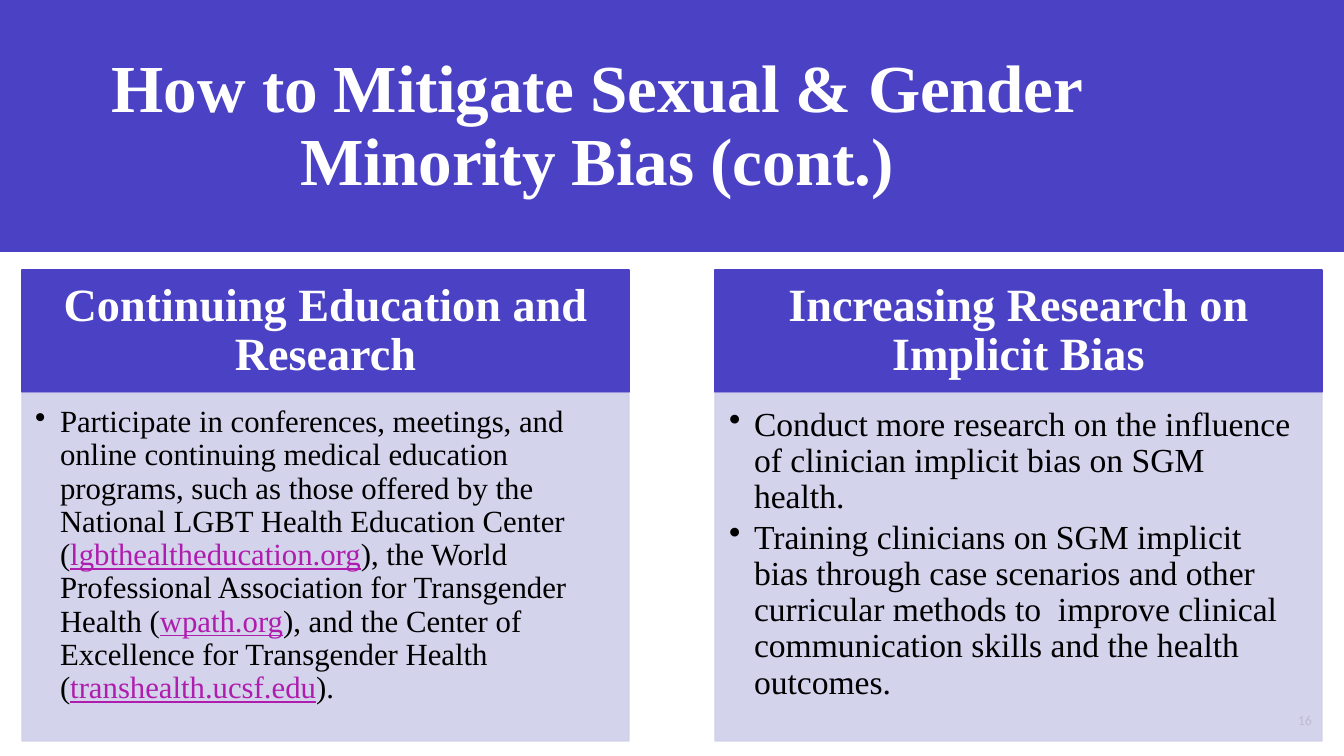
from lxml import etree
from pptx import Presentation
from pptx.dml.color import RGBColor
from pptx.enum.shapes import MSO_SHAPE
from pptx.enum.text import MSO_ANCHOR, MSO_AUTO_SIZE, PP_ALIGN
from pptx.oxml.ns import qn
from pptx.util import Emu, Pt

RECT = MSO_SHAPE.RECTANGLE
TOP, MIDDLE, BOTTOM = MSO_ANCHOR.TOP, MSO_ANCHOR.MIDDLE, MSO_ANCHOR.BOTTOM
LEFT, CENTER, RIGHT = PP_ALIGN.LEFT, PP_ALIGN.CENTER, PP_ALIGN.RIGHT
NO_FIT = MSO_AUTO_SIZE.NONE

SERIF = "Times New Roman"
INDIGO, LAVENDER, WHITE, BLACK = "4A41C5", "D0CFEA", "FFFFFF", "000000"
LINK, GREY = "AF1DAF", "BDBBD0"

CARD_W, HEAD_Y, HEAD_H, BODY_Y, BODY_H = 607, 270, 122, 393, 348

# Bullets are lists of (text, is_link) pieces
CARDS = [
    dict(x=22, heading="Continuing Education and Research", size=22,
         insets=(13, 13, 17, 19), bullets=[[
             ("Participate in conferences, meetings, and online continuing medical "
              "education programs, such as those offered by the National LGBT "
              "Health Education Center (", False),
             ("lgbthealtheducation.org", True),
             ("), the World Professional Association for Transgender Health (", False),
             ("wpath.org", True),
             ("), and the Center of Excellence for Transgender Health (", False),
             ("transhealth.ucsf.edu", True),
             (").", False)]]),
    dict(x=715, heading="Increasing Research on Implicit Bias", size=24,
         insets=(14, 14, 19, 21), bullets=[
             [("Conduct more research on the influence of clinician implicit bias "
               "on SGM health.", False)],
             [("Training clinicians on SGM implicit bias through case scenarios and "
               "other curricular methods to  improve clinical communication skills "
               "and the health outcomes.", False)]]),
]


def px(n):
    return Emu(round(n * 914400 / 100.8))


def rgb(color):
    return RGBColor.from_string(color)


def add_rect(s, x, y, w, h, color, alpha=None):
    sp = s.shapes.add_shape(RECT, px(x), px(y), px(w), px(h))
    sp.shadow.inherit = False
    sp.fill.solid()
    sp.fill.fore_color.rgb = rgb(color)
    sp.line.color.rgb = rgb(color)
    sp.line.width = Pt(1)
    if alpha:
        for clr in sp._element.spPr.iter(qn("a:srgbClr")):
            etree.SubElement(clr, qn("a:alpha")).set("val", str(alpha * 1000))
    return sp


def set_frame(sp, anchor, insets):
    tf = sp.text_frame
    tf.word_wrap = True
    tf.auto_size = NO_FIT
    tf.vertical_anchor = anchor
    tf.margin_left, tf.margin_top, tf.margin_right, tf.margin_bottom = map(px, insets)
    return tf


def set_paragraph(p, align, after=0):
    p.alignment = align
    p.line_spacing = 0.9
    p.space_before = Pt(0)
    p.space_after = Pt(after)


def add_run(p, text, size, color, font=SERIF, bold=False, underline=False):
    r = p.add_run()
    r.text = text
    r.font.name = font
    r.font.size = Pt(size)
    r.font.bold = bold
    r.font.underline = underline
    r.font.color.rgb = rgb(color)
    return r


def add_bullet(p):
    pPr = p._p.get_or_add_pPr()
    pPr.set("marL", str(px(25)))
    pPr.set("indent", str(-px(25)))
    etree.SubElement(pPr, qn("a:buChar")).set("char", "•")


def add_title(s, text):
    bar = add_rect(s, 0, 0, 1344, 252, INDIGO)
    bar.line.fill.background()
    s.shapes._spTree.insert(2, bar._element)  # behind the title
    sp = s.shapes.title
    sp.left, sp.top, sp.width, sp.height = px(72), px(40), px(1050), px(165)
    p = set_frame(sp, BOTTOM, (10, 5, 10, 5)).paragraphs[0]
    set_paragraph(p, CENTER)
    r = add_run(p, text, 48, WHITE, bold=True)
    r._r.get_or_add_rPr().set("spc", "-20")


def add_card(s, x, heading, size, insets, bullets):
    head = add_rect(s, x, HEAD_Y, CARD_W, HEAD_H, INDIGO)
    p = set_frame(head, MIDDLE, (26, 15, 26, 15)).paragraphs[0]
    set_paragraph(p, CENTER)
    add_run(p, heading, 33, WHITE, bold=True)

    body = add_rect(s, x, BODY_Y, CARD_W, BODY_H, LAVENDER, alpha=90)
    tf = set_frame(body, TOP, insets)
    for i, pieces in enumerate(bullets):
        p = tf.add_paragraph() if i else tf.paragraphs[0]
        set_paragraph(p, LEFT, after=3)
        add_bullet(p)
        for text, is_link in pieces:
            add_run(p, text, size, LINK if is_link else BLACK, underline=is_link)


def add_page_number(s, text):
    sp = s.shapes.add_textbox(px(1262), px(708), px(60), px(26))
    p = set_frame(sp, MIDDLE, (10, 5, 10, 5)).paragraphs[0]
    set_paragraph(p, RIGHT)
    add_run(p, text, 10, GREY, font="Calibri")


def main():
    prs = Presentation()
    prs.slide_width, prs.slide_height = px(1344), px(756)
    s = prs.slides.add_slide(prs.slide_layouts[5])
    add_title(s, "How to Mitigate Sexual & Gender Minority Bias (cont.)")
    for card in CARDS:
        add_card(s, **card)
    add_page_number(s, "16")
    prs.save("out.pptx")


if __name__ == "__main__":
    main()
